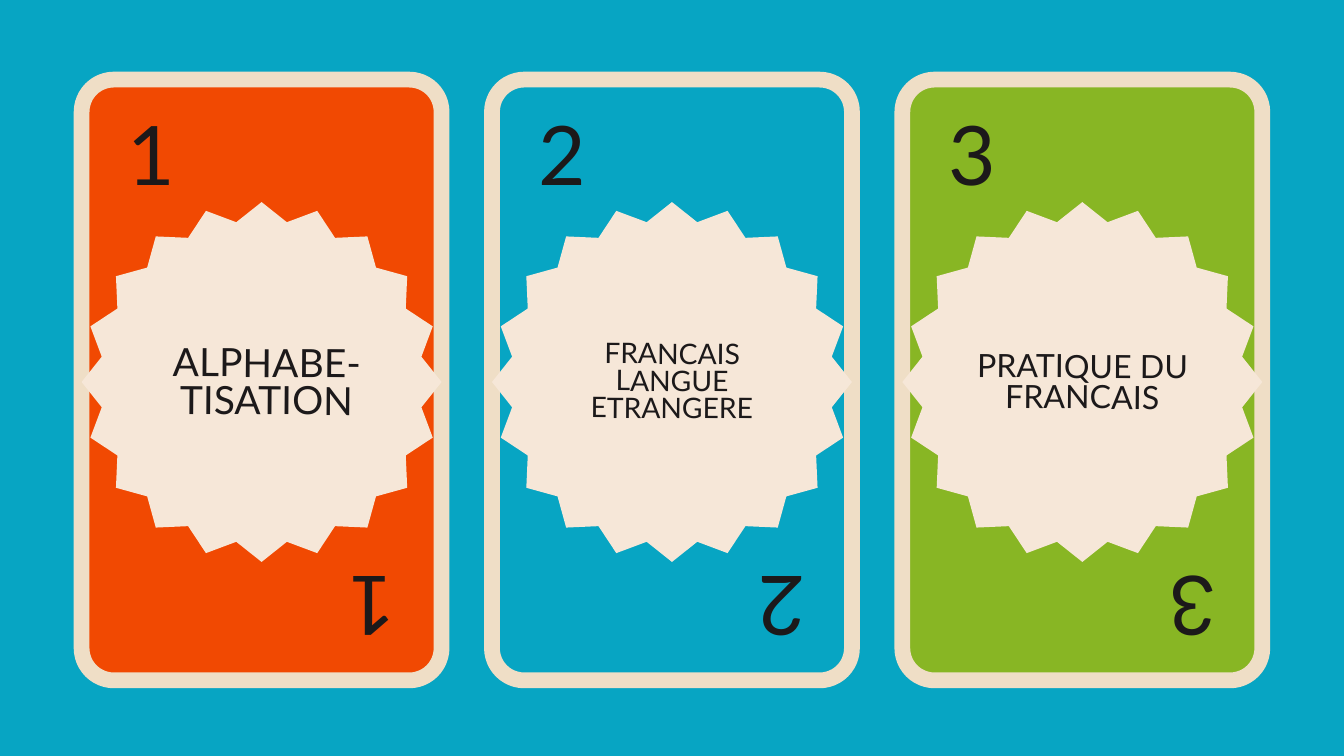
from math import cos, pi, sin

from pptx import Presentation
from pptx.dml.color import RGBColor
from pptx.enum.shapes import MSO_SHAPE
from pptx.enum.text import MSO_AUTO_SIZE, PP_ALIGN
from pptx.util import Inches, Pt

BLUE, CREAM, SAND, INK = "07A5C3", "F6E7D8", "EFDEC6", "1C191A"
FONT = "Lato"

# number, card colour, label lines, size, line spacing, label centre x (from card centre), top, width, height
CARDS = [
    ("1", "F14902", ["ALPHABE-", "TISATION"], 27.8, 26.7, 0.05, 3.45, 2.06, 0.76),
    ("2", BLUE, ["FRANCAIS LANGUE ETRANGERE"], 20.2, 19.4, 0, 3.4, 1.84, 0.8),
    ("3", "88B624", ["PRATIQUE DU FRANCAIS"], 22.9, 22, 0, 3.51, 2.37, 0.62),
]
FIRST_LEFT, CARD_TOP, CARD_WIDTH, CARD_HEIGHT, PITCH = 0.81, 0.79, 3.57, 5.96, 4.07
CORNER_RADIUS = 0.32
BURST_POINTS, OUTER_RADIUS, INNER_RADIUS, BURST_MIDDLE = 20, CARD_WIDTH / 2, 1.605, 3.79
NUMBER_WIDTH, NUMBER_HEIGHT, NUMBER_INSET = 1.11, 0.79, 0.14
NUMBER_TOP, FLIPPED_TOP = 1.22, 5.55


def color(value):
    return RGBColor.from_string(value)


def paint(shape, fill):
    shape.shadow.inherit = False
    shape.fill.solid()
    shape.fill.fore_color.rgb = color(fill)


def add_card(page, left, fill):
    card = page.shapes.add_shape(MSO_SHAPE.ROUNDED_RECTANGLE, Inches(left), Inches(CARD_TOP),
                                 Inches(CARD_WIDTH), Inches(CARD_HEIGHT))
    card.adjustments[0] = CORNER_RADIUS / CARD_WIDTH
    paint(card, fill)
    card.line.color.rgb = color(SAND)
    card.line.width = Pt(11.25)


def add_burst(page, center):
    corners = []
    for step in range(2 * BURST_POINTS):
        radius = INNER_RADIUS if step % 2 else OUTER_RADIUS
        angle = step * pi / BURST_POINTS
        corners.append((Inches(center + radius * sin(angle)),
                        Inches(BURST_MIDDLE - radius * cos(angle))))
    builder = page.shapes.build_freeform(*corners[0])
    builder.add_line_segments(corners[1:], close=True)
    burst = builder.convert_to_shape()
    paint(burst, CREAM)
    burst.line.fill.background()


def add_text(page, lines, left, top, width, height, size, spacing, rotation=0):
    box = page.shapes.add_textbox(Inches(left), Inches(top), Inches(width), Inches(height))
    box.rotation = rotation
    frame = box.text_frame
    frame.margin_left = frame.margin_right = frame.margin_top = frame.margin_bottom = 0
    frame.word_wrap = True
    frame.auto_size = MSO_AUTO_SIZE.SHAPE_TO_FIT_TEXT
    frame.text = "\n".join(lines)
    for para in frame.paragraphs:
        para.alignment = PP_ALIGN.CENTER
        para.line_spacing = Pt(spacing)
        para.font.name = FONT
        para.font.size = Pt(size)
        para.font.color.rgb = color(INK)


deck = Presentation()
deck.slide_width, deck.slide_height = Inches(13.33), Inches(7.5)
page = deck.slides.add_slide(deck.slide_layouts[6])
page.background.fill.solid()
page.background.fill.fore_color.rgb = color(BLUE)

for index, (number, fill, label, size, spacing, shift, top, width, height) in enumerate(CARDS):
    left = FIRST_LEFT + index * PITCH
    center = left + CARD_WIDTH / 2
    add_card(page, left, fill)
    add_burst(page, center)
    flipped_left = left + CARD_WIDTH - NUMBER_INSET - NUMBER_WIDTH
    for number_left, number_top, turn in ((left + NUMBER_INSET, NUMBER_TOP, 0),
                                          (flipped_left, FLIPPED_TOP, 180)):
        add_text(page, [number], number_left, number_top, NUMBER_WIDTH, NUMBER_HEIGHT,
                 58.6, 56.3, turn)
    add_text(page, label, center + shift - width / 2, top, width, height, size, spacing, 0.4)

deck.save("out.pptx")
